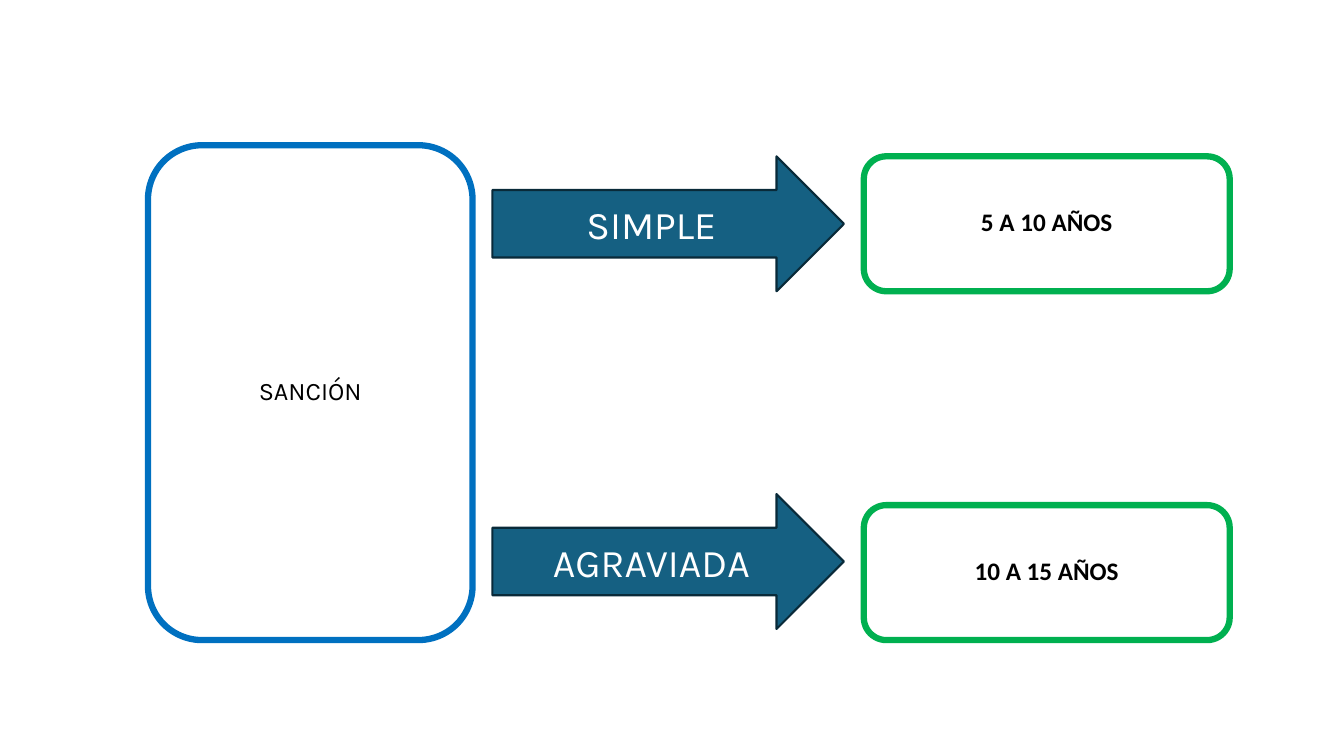
import pptx
import pptx.util
import pptx.dml.color
import pptx.enum.shapes
import pptx.enum.text
from dataclasses import dataclass

Cm, Pt = pptx.util.Cm, pptx.util.Pt
Kind = pptx.enum.shapes.MSO_SHAPE

TOPIC = "SANCIÓN"
# Arrow label, penalty, arrow top, penalty box top (cm)
CASES = [
    ("SIMPLE", "5 A 10 AÑOS", 3.94, 3.94),
    ("AGRAVIADA", "10 A 15 AÑOS", 12.45, 12.73),
]


@dataclass(frozen=True)
class Style:
    line: str
    width: float
    font: str
    size: int
    ink: str
    fill: str = ""
    bold: bool = False
    space: float = 1.0


@dataclass(frozen=True)
class Theme:
    topic: Style = Style("0070C0", 4.5, "Karla", 18, "000000", space=0.9)
    arrow: Style = Style("092A39", 1.5, "Karla", 28, "FFFFFF", fill="156082")
    term: Style = Style("00B050", 4.5, "Calibri", 18, "000000", bold=True, space=0.9)


THEME = Theme()
GAP = 0.5
ROW = 3.4
TOPIC_LEFT, TOPIC_TOP, TOPIC_WIDE, TOPIC_HIGH = 3.73, 3.66, 8.18, 12.47
ARROW_WIDE, TERM_WIDE = 8.86, 9.22
ARROW_LEFT = TOPIC_LEFT + TOPIC_WIDE + GAP
TERM_LEFT = ARROW_LEFT + ARROW_WIDE + GAP


def color(code):
    return pptx.dml.color.RGBColor.from_string(code)


def add_box(slide, kind, place, text, style):
    """Draw a shape at place (left, top, width, height in cm) with centred text."""
    shape = slide.shapes.add_shape(kind, *(Cm(part) for part in place))
    shape.shadow.inherit = False
    if style.fill:
        shape.fill.solid()
        shape.fill.fore_color.rgb = color(style.fill)
    else:
        shape.fill.background()
    shape.line.color.rgb = color(style.line)
    shape.line.width = Pt(style.width)

    frame = shape.text_frame
    frame.word_wrap = True
    frame.vertical_anchor = pptx.enum.text.MSO_ANCHOR.MIDDLE
    para = frame.paragraphs[0]
    para.alignment = pptx.enum.text.PP_ALIGN.CENTER
    para.line_spacing = style.space
    run = para.add_run()
    run.text = text
    run.font.name = style.font
    run.font.size = Pt(style.size)
    run.font.bold = style.bold
    run.font.color.rgb = color(style.ink)


def main():
    deck = pptx.Presentation()
    deck.slide_width, deck.slide_height = Cm(33.87), Cm(19.05)
    slide = deck.slides.add_slide(deck.slide_layouts.get_by_name("Blank"))

    place = (TOPIC_LEFT, TOPIC_TOP, TOPIC_WIDE, TOPIC_HIGH)
    add_box(slide, Kind.ROUNDED_RECTANGLE, place, TOPIC, THEME.topic)
    for label, term, arrow_top, term_top in CASES:
        place = (ARROW_LEFT, arrow_top, ARROW_WIDE, ROW)
        add_box(slide, Kind.RIGHT_ARROW, place, label, THEME.arrow)
        place = (TERM_LEFT, term_top, TERM_WIDE, ROW)
        add_box(slide, Kind.ROUNDED_RECTANGLE, place, term, THEME.term)

    deck.save("out.pptx")


if __name__ == "__main__":
    main()
